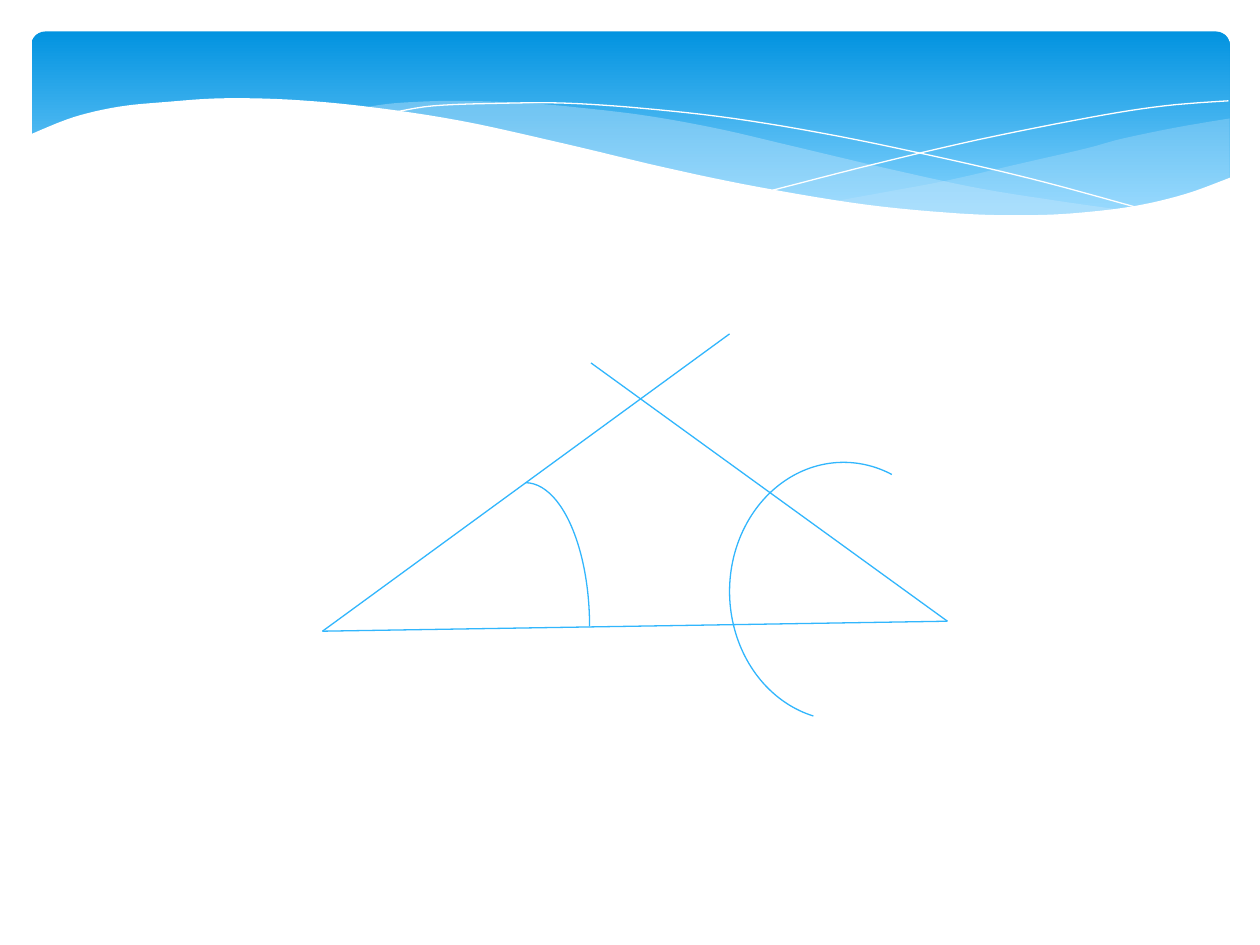
from lxml import etree
from pptx import Presentation
from pptx.dml.color import RGBColor
from pptx.enum.shapes import MSO_CONNECTOR, MSO_SHAPE
from pptx.oxml.ns import qn
from pptx.util import Pt

STRAIGHT = MSO_CONNECTOR.STRAIGHT
ROUNDED = MSO_SHAPE.ROUNDED_RECTANGLE
ARC = MSO_SHAPE.ARC
BLANK_LAYOUT = 6

COLORS = {"band_top": "0293E0", "band_bottom": "83D3FE", "wave": "C6E7FC",
          "paper": "FFFFFF", "stroke": "31B6FD"}

# Knots in points, measured from the top left corner of the header band.
RIGHT_WAVE_TOP = [(684.7, 49.7), (655, 54.7), (623.5, 61.2), (602, 67), (561.6, 76.3),
                  (524, 85), (490, 91.4), (458, 97.2)]
RIGHT_WAVE_BOTTOM = [(458, 97.2), (489.6, 100.8), (518.4, 103.7), (560, 105.8),
                     (589.7, 105), (616, 102), (645, 97), (665, 91.4), (684.7, 83.5)]
MIDDLE_WAVE_TOP = [(625, 102.2), (584.6, 96.5), (540, 89.3), (490, 78.5), (435, 65.5),
                   (391.7, 55.4), (352, 48.2), (316.8, 43.9), (284.4, 41), (242, 39.6),
                   (207.4, 41), (188, 43.9)]
MIDDLE_WAVE_BOTTOM = [(188, 43.9), (228, 49.7), (273, 58.3), (305, 65.5), (363.6, 79.2),
                      (414.7, 90), (461, 98), (502, 103), (538.6, 105.8), (571, 106.6),
                      (599, 105), (625, 102.2)]
FALLING_LINE = [(204.5, 46.8), (229.7, 42.5), (270.7, 41), (306, 41), (349, 43.9),
                (401, 49.7), (460.8, 59.8), (529, 74.2), (580, 86.4), (635, 101.5)]
RISING_LINE = [(423.4, 90.7), (482.4, 75.6), (540.7, 61.9), (605.5, 49), (647.3, 42.5),
               (684, 39.6)]
PAPER_EDGE = [(-1, 59), (24, 49), (50, 43), (77, 40.3), (109, 38.2), (148, 39), (192, 43),
              (245, 51), (304, 64), (363, 78), (416, 89), (477, 99), (530, 104), (564, 105),
              (594, 104), (629, 100), (659, 93), (685, 83.5)]
PAPER_CORNERS = [(685, 143), (-1, 143)]


def rgb(name):
    return RGBColor.from_string(COLORS[name])


def smooth_curve(knots, steps=6):
    """Return points on a Catmull-Rom curve through the knots."""
    padded = [knots[0], *knots, knots[-1]]
    points = [knots[0]]
    for a, b, c, d in zip(padded, padded[1:], padded[2:], padded[3:]):
        for step in range(1, steps + 1):
            t = step / steps
            points.append(tuple(
                q + t * ((r - p) + t * ((2 * p - 5 * q + 4 * r - s)
                                        + t * (3 * q - p - 3 * r + s))) / 2
                for p, q, r, s in zip(a, b, c, d)))
    return points


def add_outline(page, origin, points, fill=None, opacity=100, line=None):
    """Draw a closed area when a fill is given, otherwise an open line."""
    left, top = origin
    spots = [(Pt(left + x), Pt(top + y)) for x, y in points]
    builder = page.shapes.build_freeform(*spots[0])
    builder.add_line_segments(spots[1:], close=fill is not None)
    outline = builder.convert_to_shape()
    outline.shadow.inherit = False
    if fill:
        outline.fill.solid()
        outline.fill.fore_color.rgb = rgb(fill)
        if opacity < 100:
            color = outline.fill._xPr.find(qn("a:solidFill"))[0]
            etree.SubElement(color, qn("a:alpha")).set("val", str(opacity * 1000))
    else:
        outline.fill.background()
    if line:
        outline.line.color.rgb = rgb(line)
        outline.line.width = Pt(0)
    else:
        outline.line.fill.background()


def add_header(page, left, top, width, height):
    """Draw the gradient band with its waves and the curved lower edge."""
    band = page.shapes.add_shape(ROUNDED, Pt(left), Pt(top), Pt(width), Pt(height))
    band.adjustments[0] = 0.07
    band.shadow.inherit = False
    band.line.fill.background()
    band.fill.gradient()
    band.fill.gradient_angle = 270
    stops = zip(band.fill.gradient_stops, (0, 0.9), ("band_top", "band_bottom"))
    for stop, position, color in stops:
        stop.position = position
        stop.color.rgb = rgb(color)

    origin = (left, top)
    right_wave = smooth_curve(RIGHT_WAVE_TOP) + smooth_curve(RIGHT_WAVE_BOTTOM)
    middle_wave = smooth_curve(MIDDLE_WAVE_TOP) + smooth_curve(MIDDLE_WAVE_BOTTOM)
    add_outline(page, origin, right_wave, fill="wave", opacity=29)
    add_outline(page, origin, middle_wave, fill="wave", opacity=40)
    for knots in (FALLING_LINE, RISING_LINE):
        add_outline(page, origin, smooth_curve(knots), line="paper")
    add_outline(page, origin, smooth_curve(PAPER_EDGE) + PAPER_CORNERS, fill="paper")


def format_stroke(shape):
    shape.line.color.rgb = rgb("stroke")
    shape.line.width = Pt(0.75)


def add_construction(page, left, top):
    """Draw the base, two crossing rays and the compass arcs."""
    base_left, base_right = (0, 169.9), (357.1, 164.2)
    rays = [(base_left, base_right), (base_left, (232.6, 0)), (base_right, (153.4, 16.6))]
    for (x1, y1), (x2, y2) in rays:
        ray = page.shapes.add_connector(STRAIGHT, Pt(left + x1), Pt(top + y1),
                                        Pt(left + x2), Pt(top + y2))
        format_stroke(ray)
        etree.SubElement(ray._element.spPr, qn("a:effectLst"))

    arcs = [((79.2, 85, 73.4, 164.2), ()),
            ((232.6, 73.4, 130.3, 147.6), (62.17, 175.47))]
    for (x, y, width, height), angles in arcs:
        arc = page.shapes.add_shape(ARC, Pt(left + x), Pt(top + y), Pt(width), Pt(height))
        for index, angle in enumerate(angles):
            arc.adjustments[index] = angle
        arc.shadow.inherit = False
        arc.fill.background()
        format_stroke(arc)


def main():
    deck = Presentation()
    deck.slide_width, deck.slide_height = Pt(720), Pt(540)
    page = deck.slides.add_slide(deck.slide_layouts[BLANK_LAYOUT])
    page.background.fill.solid()
    page.background.fill.fore_color.rgb = rgb("paper")
    add_header(page, 18, 18, 684.7, 112.3)
    add_construction(page, 184.3, 190.8)
    deck.save("out.pptx")


if __name__ == "__main__":
    main()
